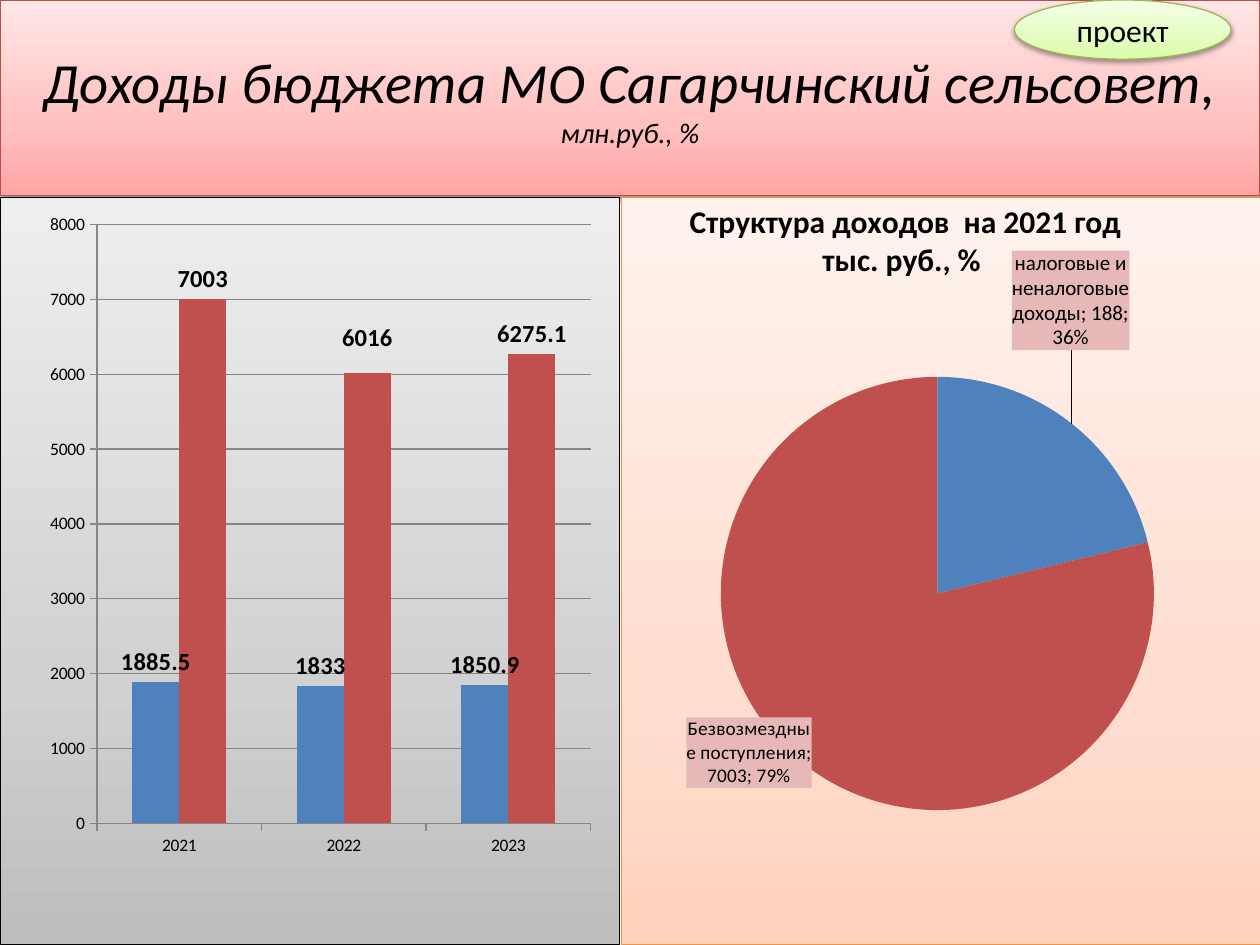
from lxml import etree
from pptx import Presentation
from pptx.chart.data import CategoryChartData
from pptx.dml.color import RGBColor
from pptx.enum.chart import XL_CHART_TYPE as ChartType, XL_LABEL_POSITION as LabelPosition
from pptx.enum.chart import XL_TICK_MARK as TickMark
from pptx.enum.shapes import MSO_SHAPE as Shape
from pptx.enum.text import MSO_ANCHOR as Anchor, PP_ALIGN as Align
from pptx.oxml import parse_xml
from pptx.oxml.ns import nsdecls, qn
from pptx.util import Inches, Pt

FONT = "Calibri"
BLUE, RED, LABEL_PINK = "4F81BD", "C0504D", "E6B8B7"
STOPS = (0, 35, 100)


def color(hex_text):
    return RGBColor.from_string(hex_text)


def style_font(font, size, bold=False, italic=False):
    font.name, font.size = FONT, Pt(size)
    font.bold, font.italic = bold, italic
    font.color.rgb = color("000000")


def paint_panel(properties, shades, border, shadow=False):
    """Add a vertical gradient, a thin border and an optional soft shadow."""
    stops = "".join(
        f'<a:gs pos="{stop * 1000}"><a:srgbClr val="{shade}"/></a:gs>'
        for stop, shade in zip(STOPS, shades))
    properties.append(parse_xml(
        f'<a:gradFill {nsdecls("a")} rotWithShape="1"><a:gsLst>{stops}</a:gsLst>'
        '<a:lin ang="16200000" scaled="1"/></a:gradFill>'))
    properties.append(parse_xml(
        f'<a:ln {nsdecls("a")} w="{Pt(0.75)}"><a:solidFill>'
        f'<a:srgbClr val="{border}"/></a:solidFill></a:ln>'))
    if shadow:
        properties.append(parse_xml(
            f'<a:effectLst {nsdecls("a")}><a:outerShdw blurRad="{Pt(3.1)}" '
            f'dist="{Pt(1.6)}" dir="5400000" rotWithShape="0"><a:srgbClr val="000000">'
            '<a:alpha val="38000"/></a:srgbClr></a:outerShdw></a:effectLst>'))


def manual_layout(edge=False, inner=False, **lengths):
    """Lay out a chart part by fractions, from the chart edge or its usual place."""
    settings = {"layoutTarget": "inner"} if inner else {}
    if edge:
        settings.update(xMode="edge", yMode="edge")
    settings.update(lengths)
    parts = "".join(f'<c:{name} val="{value}"/>' for name, value in settings.items())
    return parse_xml(f'<c:layout {nsdecls("c")}><c:manualLayout>{parts}'
                     '</c:manualLayout></c:layout>')


def remove_children(element, tag):
    for old in element.findall(qn(tag)):
        element.remove(old)


def add_panel_chart(page, box, kind, categories, series, shades, border, plot_box):
    """Place a chart on a gradient panel with a fixed plot area."""
    data = CategoryChartData()
    data.categories = categories
    for number, values in enumerate(series, 1):
        data.add_series(f"Series {number}", values)
    chart = page.shapes.add_chart(kind, *map(Inches, box), data).chart
    chart.has_legend = chart.has_title = False
    style_font(chart.font, 10)

    space = chart._chartSpace
    panel = etree.Element(qn("c:spPr"))
    space.find(qn("c:chart")).addnext(panel)
    paint_panel(panel, shades, border)

    plot_area = space.find(".//" + qn("c:plotArea"))
    remove_children(plot_area, "c:layout")
    plot_area.insert(0, manual_layout(True, True, **dict(zip("xywh", plot_box))))
    return chart


def point_label(series, index):
    return series._element.xpath(f'.//c:dLbl[c:idx/@val="{index}"]')[0]


def shift_label(label, x, y):
    label.find(qn("c:idx")).addnext(manual_layout(x=x, y=y))


def build_header(page, box):
    title = page.shapes.title
    title.left, title.top, title.width, title.height = map(Inches, box)
    paint_panel(title._element.spPr, ("FFA6A5", "FFC0BF", "FFE7E7"), "BF4C48", True)
    frame = title.text_frame
    frame.vertical_anchor = Anchor.MIDDLE
    frame.word_wrap = True
    para = frame.paragraphs[0]
    para.text = "Доходы бюджета МО Сагарчинский сельсовет,\vмлн.руб., %"
    para.alignment = Align.CENTER
    for span, size in zip(para.runs, (32.4, 16.2)):
        style_font(span.font, size, italic=True)


def build_badge(page, box):
    badge = page.shapes.add_shape(Shape.OVAL, *map(Inches, box))
    paint_panel(badge._element.spPr, ("DAFDA7", "E4FCC2", "F5FFE7"), "98B955", True)
    frame = badge.text_frame
    frame.text = "проект"
    frame.vertical_anchor = Anchor.MIDDLE
    para = frame.paragraphs[0]
    para.alignment = Align.CENTER
    style_font(para.runs[0].font, 18)


def build_income_columns(page, box):
    chart = add_panel_chart(
        page, box, ChartType.COLUMN_CLUSTERED, ("2021", "2022", "2023"),
        ((1885.5, 1833, 1850.9), (7003, 6016, 6275.1)),
        ("BDBDBD", "D1D1D1", "EEEEEE"), "000000", (0.156, 0.037, 0.798, 0.801))
    plot = chart.plots[0]
    plot.gap_width, plot.overlap, plot.vary_by_categories = 150, 0, False
    for series, shade in zip(plot.series, (BLUE, RED)):
        series.format.fill.solid()
        series.format.fill.fore_color.rgb = color(shade)
        labels = series.data_labels
        labels.show_value = True
        labels.position = LabelPosition.OUTSIDE_END
        style_font(labels.font, 14, bold=True)

    # The 2022 label stands a little higher, without a leader line
    income = plot.series[1]
    raised = income.points[1].data_label
    style_font(raised.font, 14, bold=True)
    raised.position = LabelPosition.OUTSIDE_END
    label = point_label(income, 1)
    shift_label(label, 0, -0.02)
    all_labels = label.getparent()
    remove_children(all_labels, "c:showLeaderLines")
    etree.SubElement(all_labels, qn("c:showLeaderLines"), val="0")

    # Axes
    values = chart.value_axis
    values.minimum_scale, values.maximum_scale, values.major_unit = 0, 8000, 1000
    values.has_major_gridlines = True
    lines = [values.major_gridlines.format.line]
    for axis in (values, chart.category_axis):
        axis.major_tick_mark = TickMark.OUTSIDE
        lines.append(axis.format.line)
    for line in lines:
        line.color.rgb = color("868686")
        line.width = Pt(0.75)


def build_structure_pie(page, box):
    chart = add_panel_chart(
        page, box, ChartType.PIE,
        ("налоговые и неналоговые доходы", "Безвозмездные поступления"),
        ((1885.5, 7003),), ("FFD2BD", "FFDED0", "FFF2ED"), "F69240",
        (0.155, 0.236, 0.678, 0.589))

    # Title
    frame = chart.chart_title.text_frame
    frame.text = "Структура доходов  на 2021 год\nтыс. руб., % "
    for para in frame.paragraphs:
        style_font(para.runs[0].font, 18, bold=True)
    title = chart.chart_title._element
    remove_children(title, "c:layout")
    title.find(qn("c:tx")).addnext(manual_layout(True, x=0.1, y=0))

    # Slices and their labels
    series = chart.plots[0].series[0]
    labels = series.data_labels
    labels.show_value = labels.show_percentage = labels.show_category_name = True
    labels.position = LabelPosition.OUTSIDE_END
    style_font(labels.font, 12)
    slices = ((BLUE, 12, (-0.1, -0.09), "налоговые и неналоговые доходы; 188; 36%"),
              (RED, 11, (0.02, -0.07), None))
    for index, (shade, size, offset, text) in enumerate(slices):
        point = series.points[index]
        point.format.fill.solid()
        point.format.fill.fore_color.rgb = color(shade)
        label = point.data_label
        if text:
            label.text_frame.text = text
            style_font(label.text_frame.paragraphs[0].runs[0].font, size)
        else:
            style_font(label.font, size)
        label.position = LabelPosition.OUTSIDE_END
        element = point_label(series, index)
        shift_label(element, *offset)
        for flag in ("c:showVal", "c:showCatName", "c:showPercent"):
            element.find(qn(flag)).set("val", "1")
        separator = etree.Element(qn("c:separator"))
        separator.text = "; "
        element.find(qn("c:showBubbleSize")).addnext(separator)
        remove_children(element, "c:spPr")
        following = element.find(qn("c:dLblPos" if text else "c:txPr"))
        following.addprevious(parse_xml(
            f'<c:spPr {nsdecls("c", "a")}><a:solidFill><a:srgbClr val="{LABEL_PINK}"/>'
            '</a:solidFill></c:spPr>'))


deck = Presentation()
deck.slide_width, deck.slide_height = Inches(10), Inches(7.5)
page = deck.slides.add_slide(deck.slide_layouts[5])
build_header(page, (0, 0, 10, 1.55))
build_income_columns(page, (0, 1.56, 4.92, 5.94))
build_structure_pie(page, (4.93, 1.56, 5.08, 5.94))
build_badge(page, (8.05, 0, 1.72, 0.47))
deck.save("out.pptx")
